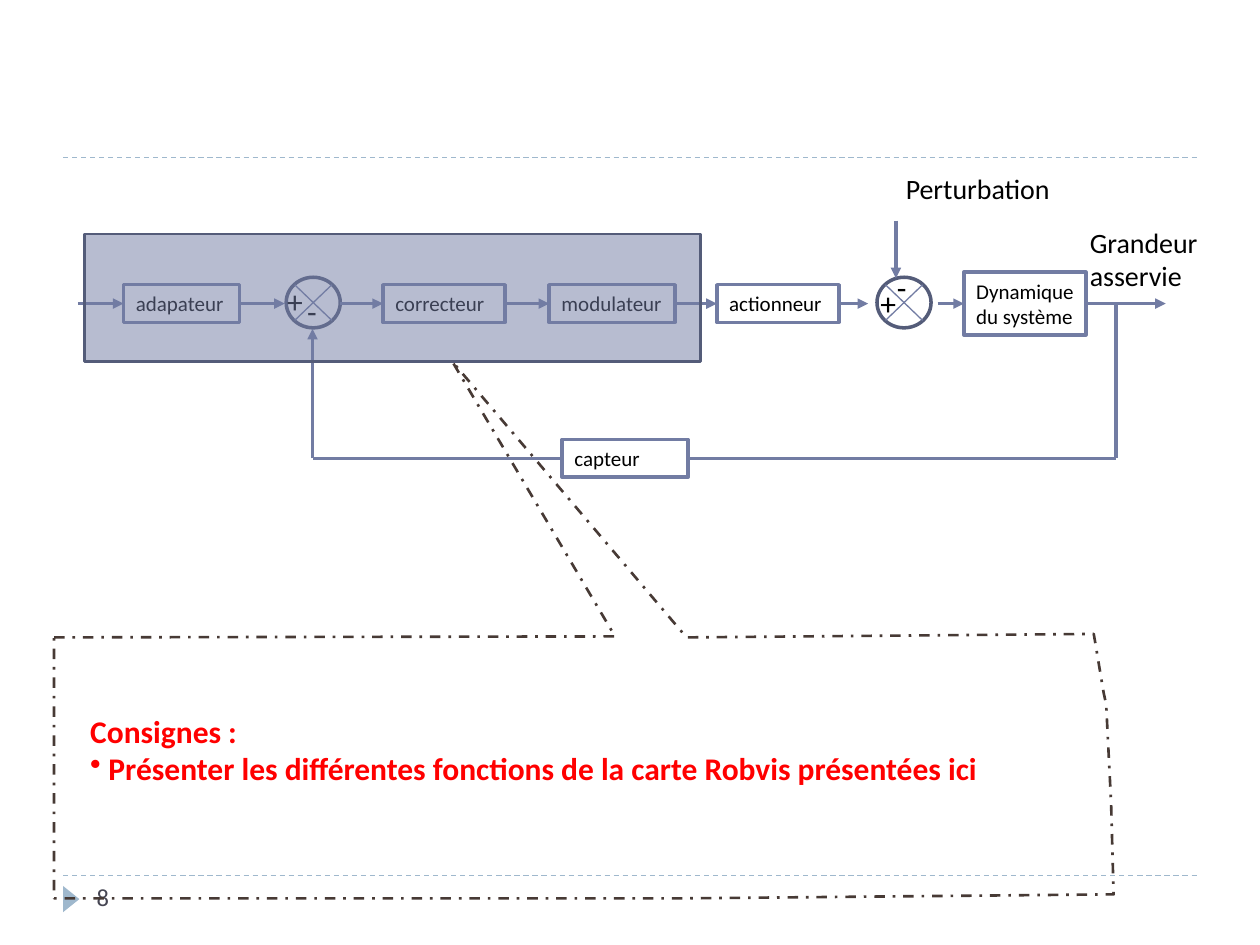
from dataclasses import dataclass

from lxml import etree
from pptx import Presentation
from pptx.dml.color import RGBColor
from pptx.enum import dml, shapes, text
from pptx.oxml import ns
from pptx.util import Cm, Pt


@dataclass(frozen=True)
class Theme:
    font: str = "Calibri"
    black: str = "000000"
    red: str = "FF0000"
    grey: str = "464653"
    pale: str = "9FB8CD"
    blue: str = "727CA3"
    dark_blue: str = "545C79"
    brown: str = "473A35"
    block_size: int = 12
    page_size: int = 14
    label_size: int = 16
    large_size: int = 18


theme = Theme()
presentation = Presentation()
presentation.slide_width, presentation.slide_height = Cm(25.4), Cm(19.05)
slide = presentation.slides.add_slide(presentation.slide_layouts[6])
blocks = {}
outlines = []  # (shape, fill colour, line colour, line width)


def write(shape, lines, size, color=theme.black, bold=False, anchor=text.MSO_ANCHOR.TOP):
    frame = shape.text_frame
    frame.word_wrap, frame.vertical_anchor = True, anchor
    frame.text = "\n".join(lines)
    font_format = {"name": theme.font, "size": Pt(size), "bold": bold}
    for paragraph in frame.paragraphs:
        paragraph.alignment = text.PP_ALIGN.LEFT
        for run in paragraph.runs:
            for name, value in font_format.items():
                setattr(run.font, name, value)
            run.font.color.rgb = RGBColor.from_string(color)


def draw_line(start, end, color=theme.blue, width=2.0, arrow=False):
    """Each end is an (x, y) point in cm, or a (block name, side) pair to join."""
    points = [(0, 0) if isinstance(place[0], str) else place for place in (start, end)]
    connector = slide.shapes.add_connector(
        shapes.MSO_CONNECTOR.STRAIGHT, *(Cm(value) for point in points for value in point)
    )
    for place, join in ((start, connector.begin_connect), (end, connector.end_connect)):
        if isinstance(place[0], str):
            join(blocks[place[0]], place[1])
    connector.line.color.rgb = RGBColor.from_string(color)
    connector.line.width = Pt(width)
    if arrow:
        etree.SubElement(connector.line._get_or_add_ln(), ns.qn("a:tailEnd"), type="triangle")
    etree.SubElement(connector._element.spPr, ns.qn("a:effectLst"))
    return connector


# Page frame
for y in (17.65, 3.18):
    rule = draw_line((1.27, y), (24.13, y), theme.pale, 0.75)
    rule.line.dash_style = dml.MSO_LINE.DASH
marker = slide.shapes.add_shape(
    shapes.MSO_SHAPE.ISOSCELES_TRIANGLE, Cm(1.17), Cm(17.96), Cm(0.53), Cm(0.33)
)
marker.rotation = 90
outlines.append((marker, theme.pale, None, 0))
page_number = slide.shapes.add_textbox(Cm(1.7), Cm(17.65), Cm(5.51), Cm(1.02))
write(page_number, ["8"], theme.page_size, theme.grey)

# Instructions and their callout
instructions = slide.shapes.add_textbox(Cm(1.57), Cm(14.22), Cm(22.02), Cm(1.8))
write(
    instructions,
    ["Consignes :", " Présenter les différentes fonctions de la carte Robvis présentées ici"],
    theme.large_size, theme.red, bold=True,
)
bullet_properties = instructions.text_frame.paragraphs[1]._p.get_or_add_pPr()
etree.SubElement(bullet_properties, ns.qn("a:buChar"), char="•")

callout_points = [
    (1.09, 12.85), (12.4, 12.83), (9.12, 7.29), (13.84, 12.85), (22.05, 12.78), (22.25, 13.97),
    (22.3, 14.2), (22.4, 16.18), (22.45, 18.03), (13.84, 18.11), (1.09, 18.11),
]
corners = [(Cm(x), Cm(y)) for x, y in callout_points]
builder = slide.shapes.build_freeform(*corners[0])
builder.add_line_segments(corners[1:], close=True)
callout = builder.convert_to_shape()
callout.line.dash_style = dml.MSO_LINE.DASH_DOT
outlines.append((callout, None, theme.brown, 1.5))

# Blocks, centred on the forward or the feedback axis
forward, feedback = 6.12, 9.24
for name, left, axis, width, height in [
    ("adapateur", 2.49, forward, 2.34, 0.76),
    ("correcteur", 7.72, forward, 2.46, 0.76),
    ("modulateur", 11.07, forward, 2.54, 0.76),
    ("actionneur", 14.45, forward, 2.46, 0.76),
    ("Dynamique du système", 19.43, forward, 2.46, 1.27),
    ("capteur", 11.33, feedback, 2.54, 0.76),
]:
    block = slide.shapes.add_shape(
        shapes.MSO_SHAPE.RECTANGLE, Cm(left), Cm(axis - height / 2), Cm(width), Cm(height)
    )
    write(block, [name], theme.block_size, anchor=text.MSO_ANCHOR.MIDDLE)
    block.text_frame.margin_right = Cm(0)
    blocks[name] = block
    outlines.append((block, None, theme.blue, 2))

# Summing points: circle, cross and signs
sum_top, sum_width, sum_height = 5.59, 1.09, 1.02
inset_x, inset_y = 0.17, 0.15
for left, signs in [
    (5.77, [("-", 5.94, 5.77), ("+", 5.54, 5.56)]),
    (17.68, [("-", 17.83, 5.28), ("+", 17.5, 5.61)]),
]:
    circle = slide.shapes.add_shape(
        shapes.MSO_SHAPE.OVAL, Cm(left), Cm(sum_top), Cm(sum_width), Cm(sum_height)
    )
    outlines.append((circle, None, theme.dark_blue, 2))
    x1, x2 = left + inset_x, left + sum_width - inset_x
    y1, y2 = sum_top + inset_y, sum_top + sum_height - inset_y
    draw_line((x1, y1), (x2, y2), width=0.75)
    draw_line((x1, y2), (x2, y1), width=0.75)
    for sign, x, y in signs:
        sign_box = slide.shapes.add_textbox(Cm(x), Cm(y), Cm(1.14), Cm(1.02))
        write(sign_box, [sign], theme.large_size)

# Signal flow
left_side, right_side = 1, 3
system = "Dynamique du système"
for start, end, arrow in [
    ((1.57, forward), ("adapateur", left_side), True),
    (("adapateur", right_side), (5.74, forward), True),
    ((6.86, forward), ("correcteur", left_side), True),
    (("correcteur", right_side), ("modulateur", left_side), True),
    (("modulateur", right_side), ("actionneur", left_side), True),
    (("actionneur", right_side), (17.5, forward), True),
    ((18.9, forward), (system, left_side), True),
    ((system, right_side), (23.5, forward), True),
    ((18.06, 4.45), (18.06, 5.61), True),
    ((22.5, forward), (22.5, feedback), False),
    (("capteur", right_side), (22.5, feedback), False),
    ((6.3, feedback), ("capteur", left_side), False),
    ((6.3, feedback), (6.3, 6.63), True),
]:
    draw_line(start, end, arrow=arrow)

for label, x, y, height in [
    ("Grandeur asservie", 21.72, 4.42, 1.63),
    ("Perturbation", 18.01, 3.33, 0.94),
]:
    label_box = slide.shapes.add_textbox(Cm(x), Cm(y), Cm(3.91), Cm(height))
    write(label_box, [label], theme.label_size)

# Translucent panel over the control board
panel = slide.shapes.add_shape(
    shapes.MSO_SHAPE.RECTANGLE, Cm(1.7), Cm(4.72), Cm(12.42), Cm(2.57)
)
outlines.append((panel, theme.blue, theme.dark_blue, 1.5))

for shape, fill, line, width in outlines:
    shape.shadow.inherit = False
    for target, color in ((shape.fill, fill), (shape.line.fill, line)):
        if color:
            target.solid()
            target.fore_color.rgb = RGBColor.from_string(color)
        else:
            target.background()
    if line:
        shape.line.width = Pt(width)

panel_color = panel._element.spPr.find(ns.qn("a:solidFill")).find(ns.qn("a:srgbClr"))
etree.SubElement(panel_color, ns.qn("a:alpha"), val="51000")

presentation.save("out.pptx")
